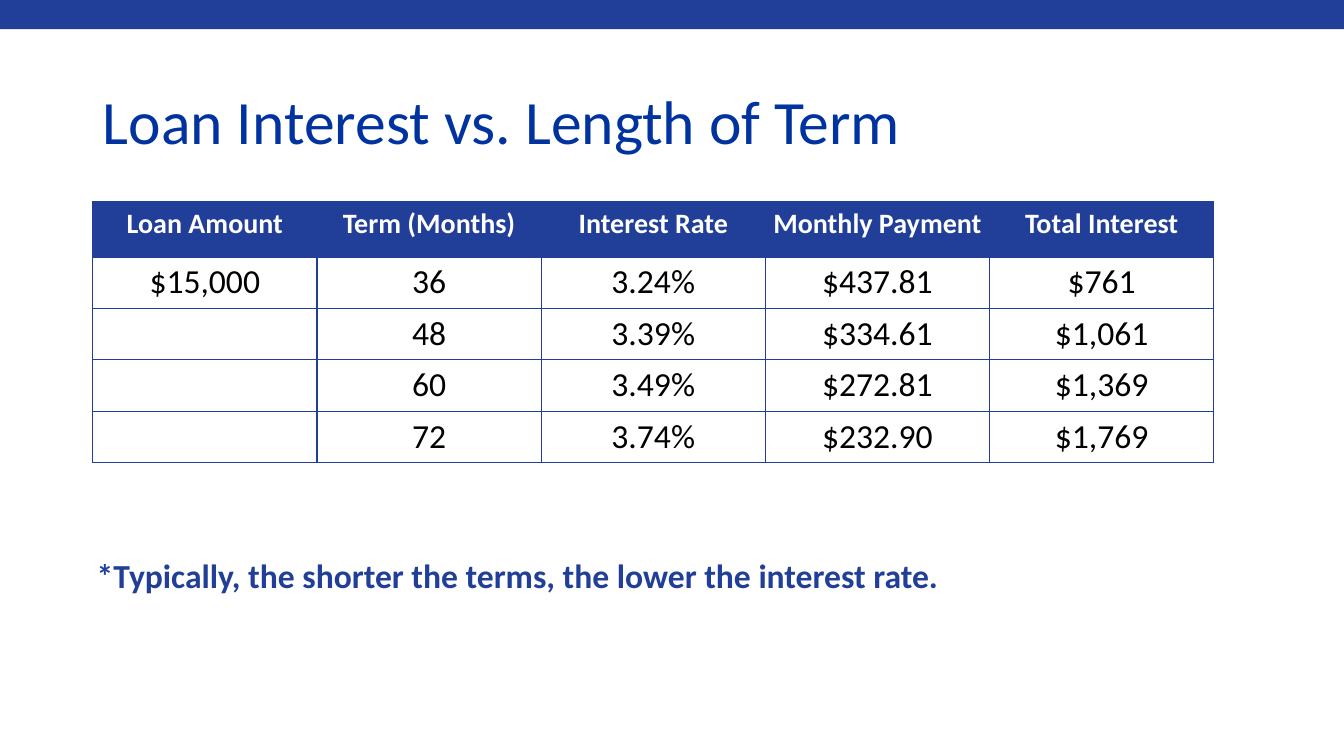
import pptx
import pptx.util
import pptx.dml.color
import pptx.enum.shapes
import pptx.enum.text
import pptx.oxml

Inches = pptx.util.Inches
Pt = pptx.util.Pt
ALIGN = pptx.enum.text.PP_ALIGN
MIDDLE = pptx.enum.text.MSO_ANCHOR.MIDDLE
COLORS = {"blue": "213F98", "title": "0033A0", "white": "FFFFFF", "black": "000000"}
NS = "http://schemas.openxmlformats.org/drawingml/2006/main"


def rgb(name):
    return pptx.dml.color.RGBColor.from_string(COLORS[name])


def write(para, text, size, color, bold=False, align=ALIGN.LEFT):
    """Add one formatted run to an aligned paragraph."""
    para.alignment = align
    run = para.add_run()
    run.text = text
    run.font.name = "Calibri"
    run.font.size = Pt(size)
    run.font.bold = bold
    run.font.color.rgb = rgb(color)


deck = pptx.Presentation()
deck.slide_width = Inches(13.33)
deck.slide_height = Inches(7.5)
slide = deck.slides.add_slide(deck.slide_layouts[5])

# Top band
band = slide.shapes.add_shape(
    pptx.enum.shapes.MSO_SHAPE.RECTANGLE,
    Inches(0), Inches(-0.02), Inches(13.33), Inches(0.31))
band.shadow.inherit = False
band.fill.solid()
band.fill.fore_color.rgb = rgb("blue")
band.line.fill.background()

# Title
title = slide.shapes.title
title.left, title.top = Inches(0.92), Inches(0.76)
title.width, title.height = Inches(11.5), Inches(0.95)
frame = title.text_frame
frame.auto_size = pptx.enum.text.MSO_AUTO_SIZE.NONE
frame.vertical_anchor = MIDDLE
frame.paragraphs[0].line_spacing = 0.9
write(frame.paragraphs[0], "Loan Interest vs. Length of Term", 44, "title")

# Loan table
rows = [
    ["Loan Amount", "Term (Months)", "Interest Rate", "Monthly Payment", "Total Interest"],
    ["$15,000", "36", "3.24%", "$437.81", "$761"],
    ["", "48", "3.39%", "$334.61", "$1,061"],
    ["", "60", "3.49%", "$272.81", "$1,369"],
    ["", "72", "3.74%", "$232.90", "$1,769"],
]
holder = slide.shapes.add_table(
    len(rows), len(rows[0]), Inches(0.92), Inches(2), Inches(11.12), Inches(2.6))
table = holder.table
table.horz_banding = False
for col in table.columns:
    col.width = Inches(11.12 / len(rows[0]))

for r, row in enumerate(rows):
    head = r == 0
    table.rows[r].height = Inches(0.55 if head else 0.51)
    for c, text in enumerate(row):
        cell = table.cell(r, c)
        cell.margin_left = cell.margin_right = Inches(0.05)
        cell.margin_top = cell.margin_bottom = Inches(0.05)
        if head:
            cell.fill.solid()
            cell.fill.fore_color.rgb = rgb("blue")
        else:
            cell.fill.background()
        if text:
            write(cell.text_frame.paragraphs[0], text, 20 if head else 24,
                  "white" if head else "black", head, ALIGN.CENTER)
        props = cell._tc.get_or_add_tcPr()
        for i, side in enumerate(["lnL", "lnR", "lnT", "lnB"]):
            props.insert(i, pptx.oxml.parse_xml(
                f'<a:{side} xmlns:a="{NS}" w="{Pt(1)}"><a:solidFill>'
                f'<a:srgbClr val="{COLORS["blue"]}"/></a:solidFill></a:{side}>'))

# Footnote
note = slide.shapes.add_textbox(Inches(0.9), Inches(5.44), Inches(10.54), Inches(0.52))
frame = note.text_frame
frame.word_wrap = True
frame.auto_size = pptx.enum.text.MSO_AUTO_SIZE.SHAPE_TO_FIT_TEXT
frame.vertical_anchor = MIDDLE
frame.margin_left = frame.margin_right = Inches(0.06)
frame.margin_top = frame.margin_bottom = Inches(0.06)
write(frame.paragraphs[0],
      "*Typically, the shorter the terms, the lower the interest rate.", 24, "blue", True)

deck.save("out.pptx")
